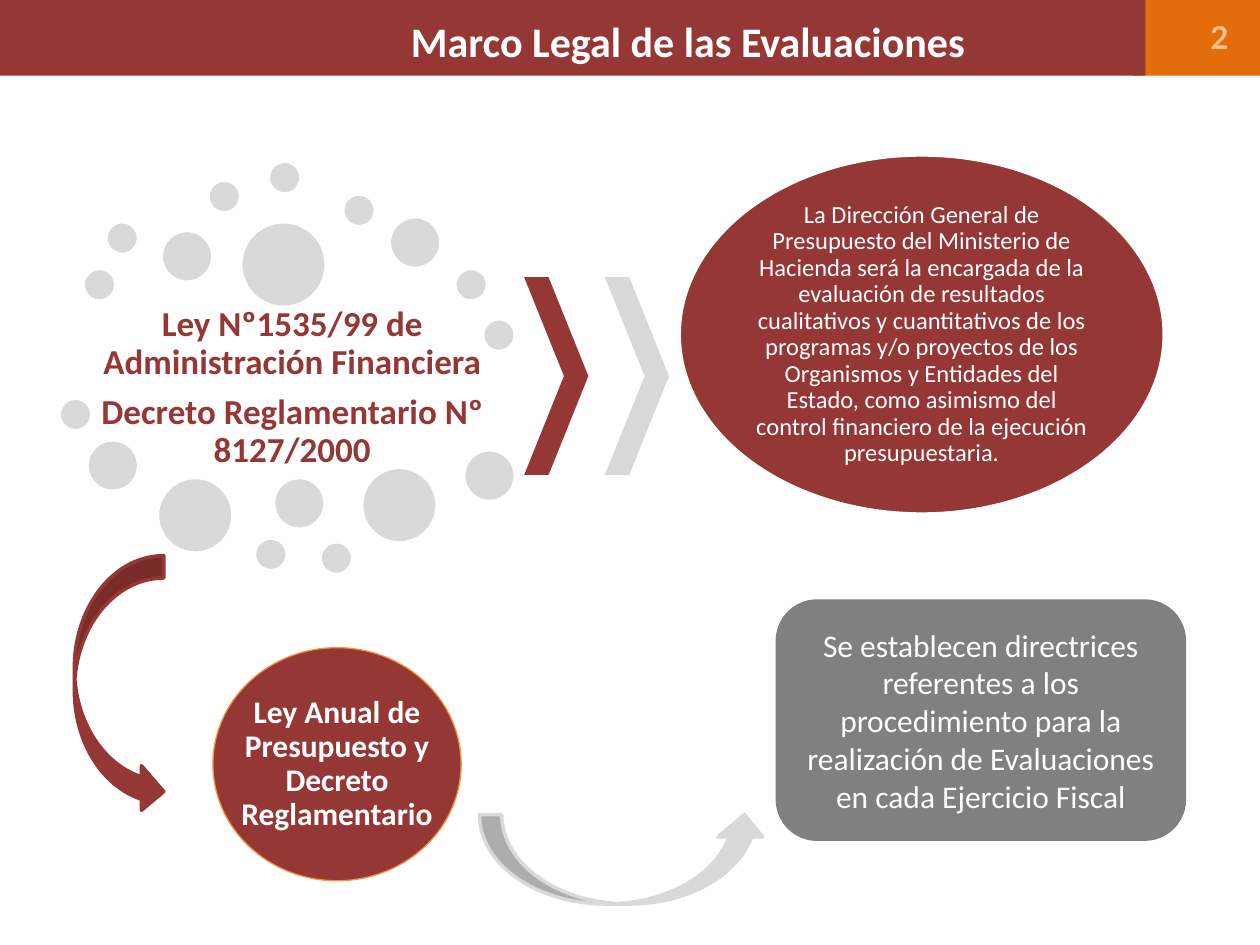
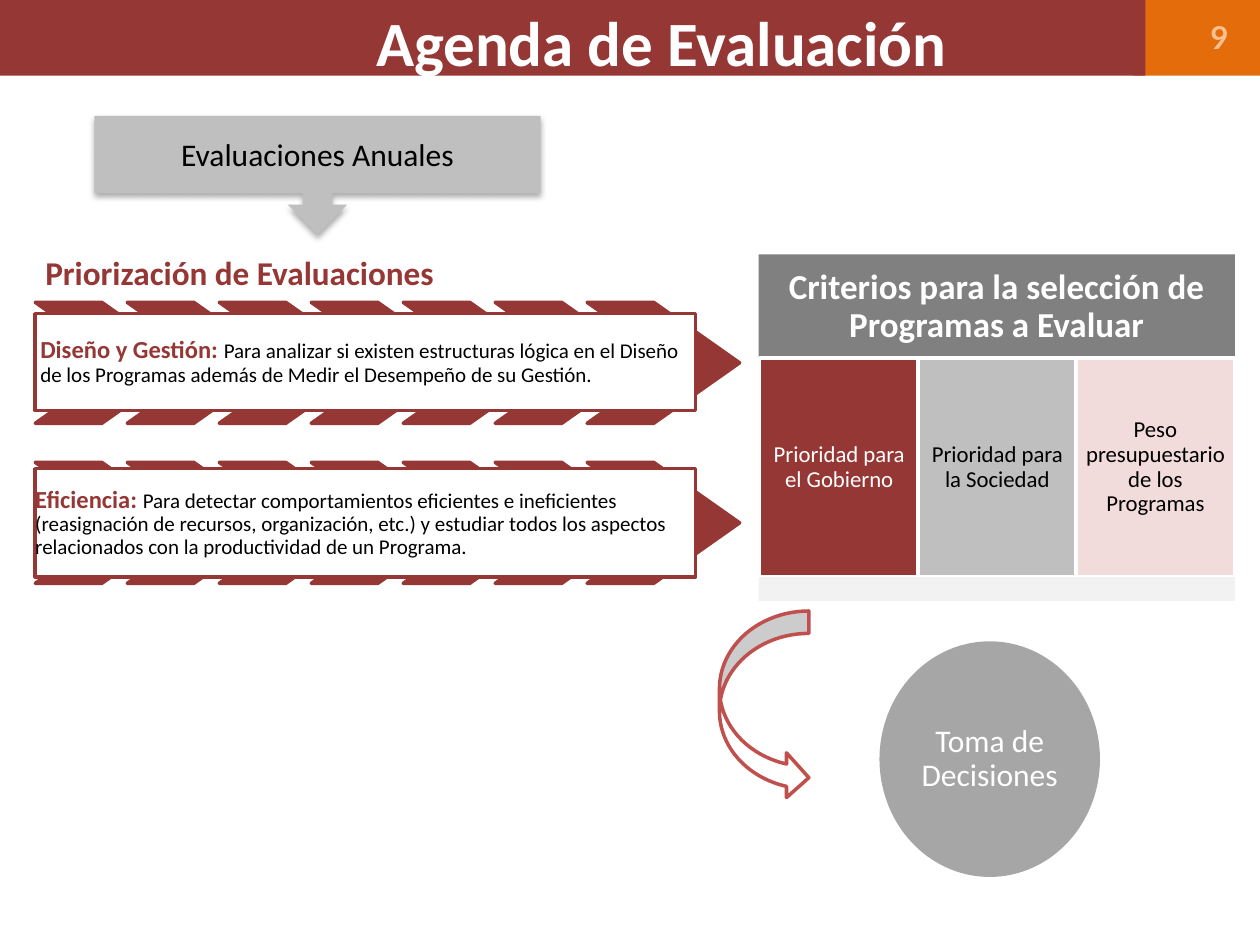
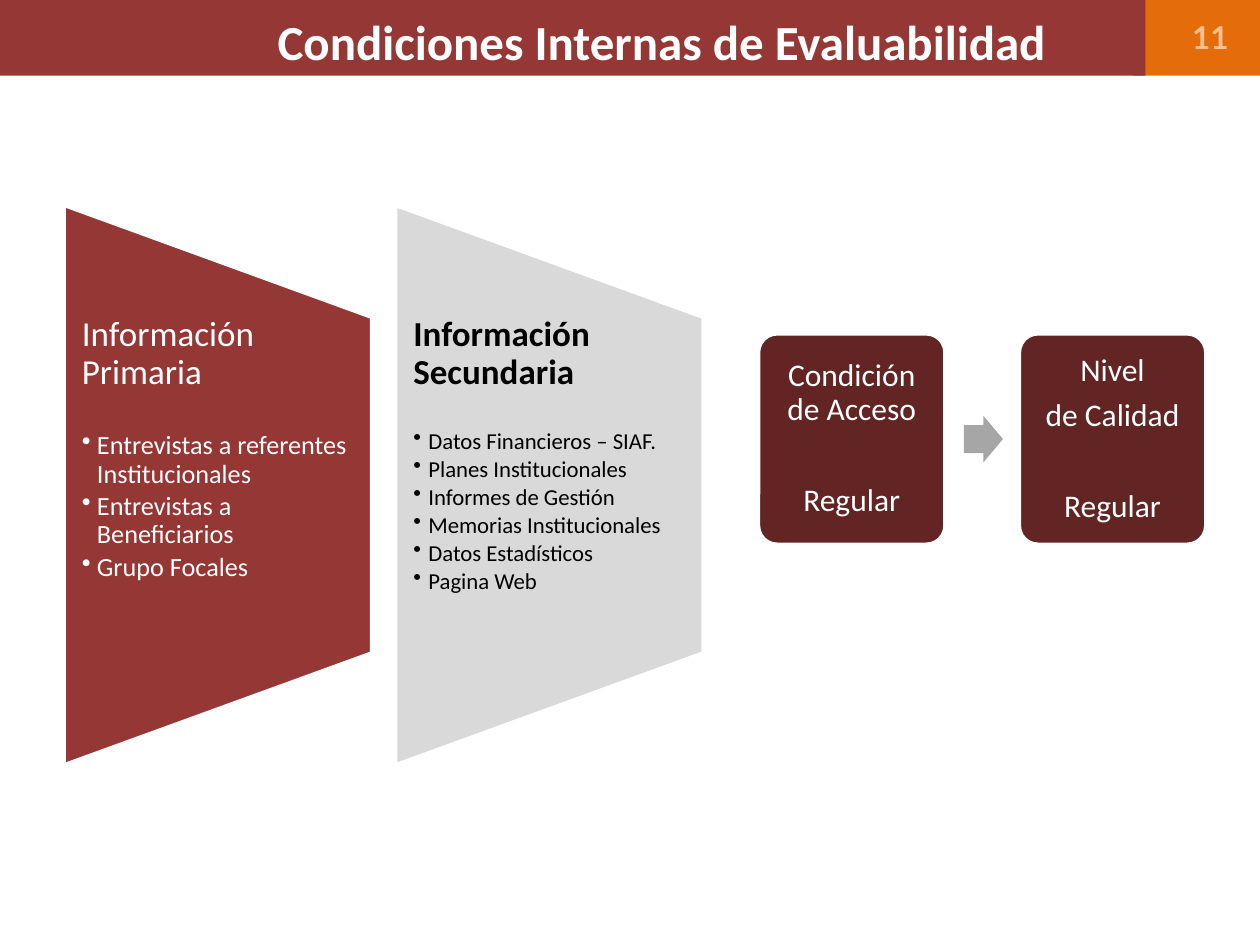
import pptx
import pptx.dml.color
import pptx.enum.shapes
import pptx.enum.text
import pptx.oxml
import pptx.util
from lxml import etree

Inches = pptx.util.Inches
Pt = pptx.util.Pt
RGBColor = pptx.dml.color.RGBColor
SHAPE = pptx.enum.shapes.MSO_SHAPE
ANCHOR = pptx.enum.text.MSO_ANCHOR
ALIGN = pptx.enum.text.PP_ALIGN

WINE = RGBColor(0x95, 0x37, 0x35)
DARK_WINE = RGBColor(0x63, 0x25, 0x23)
RED = RGBColor(0xC0, 0x50, 0x4D)
ROSE = RGBColor(0xF2, 0xDC, 0xDB)
ORANGE = RGBColor(0xE4, 0x6C, 0x0A)
LIGHT_ORANGE = RGBColor(0xF5, 0x92, 0x40)
PEACH = RGBColor(0xFA, 0xC0, 0x90)
WHITE = RGBColor(0xFF, 0xFF, 0xFF)
BLACK = RGBColor(0, 0, 0)
PALE_GRAY = RGBColor(0xF2, 0xF2, 0xF2)
LIGHT_GRAY = RGBColor(0xD9, 0xD9, 0xD9)
SILVER = RGBColor(0xBF, 0xBF, 0xBF)
MID_GRAY = RGBColor(0xA6, 0xA6, 0xA6)
GRAY = RGBColor(0x80, 0x80, 0x80)
DRAWING_NS = "http://schemas.openxmlformats.org/drawingml/2006/main"


def draw(slide, kind, box, fill, line=None, width=2, adjust=None):
    shape = slide.shapes.add_shape(kind, *[Inches(length) for length in box])
    shape.shadow.inherit = False
    shape.fill.solid()
    shape.fill.fore_color.rgb = fill
    if line is None:
        shape.line.fill.background()
    else:
        shape.line.color.rgb = line
        shape.line.width = Pt(width)
    if adjust is not None:
        shape.adjustments[0] = adjust
    return shape


def write(shape, text, size, color, bold=False, align=ALIGN.CENTER, inset=None,
          anchor=ANCHOR.MIDDLE, spacing=0.9, after=0.35, font="Calibri"):
    frame = shape.text_frame
    frame.text = text
    frame.word_wrap = True
    frame.auto_size = pptx.enum.text.MSO_AUTO_SIZE.NONE
    frame.vertical_anchor = anchor
    if inset is not None:
        frame.margin_left = frame.margin_right = Inches(inset)
        frame.margin_top = frame.margin_bottom = Inches(inset)
    for paragraph in frame.paragraphs:
        paragraph.alignment = align
        paragraph.line_spacing = spacing
        paragraph.space_after = Pt(size * after)
        for run in paragraph.runs:
            run.font.name = font
            run.font.size = Pt(size)
            run.font.bold = bold
            run.font.color.rgb = color
    return frame


prs = pptx.Presentation()
prs.slide_width = Inches(10)
prs.slide_height = Inches(7.5)
layout = prs.slide_layouts[5]

slides = []
for title, size, left, number in [
    ("Marco Legal de las Evaluaciones", 24, 0.96, "2"),
    ("Agenda de Evaluación", 36, 0.75, "9"),
    ("Condiciones Internas de Evaluabilidad", 28, 0.75, "11"),
]:
    slide = prs.slides.add_slide(layout)
    heading = slide.shapes.title
    heading.left, heading.top = Inches(left), Inches(0.01)
    heading.width, heading.height = Inches(9), Inches(0.63)
    write(heading, title, size, WHITE, bold=True, spacing=1.0, after=0)
    page = slide.shapes.add_textbox(Inches(9.1), Inches(0.09), Inches(0.75), Inches(0.4))
    write(page, number, 18, PEACH, bold=True, align=ALIGN.RIGHT, spacing=1.0, after=0, font="Lato")
    slides.append(slide)
legal, agenda, conditions = slides

for order, (box, color) in enumerate([((8.99, 0, 1.01, 0.6), ORANGE), ((0, 0, 9.09, 0.6), WINE)]):
    band = draw(legal, SHAPE.RECTANGLE, box, color)
    band._element.nvSpPr.cNvPr.set("id", str(20 + order))
    layout.shapes._spTree.insert(2 + order, band._element)

laws = legal.shapes.add_textbox(Inches(0.66), Inches(2.35), Inches(3.32), Inches(1.46))
write(laws, "Ley Nº1535/99 de Administración Financiera\nDecreto Reglamentario Nº 8127/2000",
      20, WINE, bold=True, inset=0.03)
dots = {
    0.26: [(0.66, 2.13), (0.84, 1.76), (1.65, 1.43), (2.13, 1.28), (2.72, 1.54), (3.61, 2.13),
           (3.83, 2.53), (0.47, 3.16), (2.02, 4.27), (2.54, 4.3)],
    0.41: [(1.28, 1.83), (3.09, 1.72), (0.69, 3.49), (2.17, 3.79), (3.68, 3.57)],
    0.6: [(1.25, 3.79), (2.87, 3.71)],
    0.68: [(1.91, 1.76)],
}
for diameter, places in dots.items():
    for left, top in places:
        draw(legal, SHAPE.OVAL, (left, top, diameter, diameter), LIGHT_GRAY, WHITE)
for left, color in [(4.16, WINE), (4.8, LIGHT_GRAY)]:
    draw(legal, SHAPE.CHEVRON, (left, 2.2, 0.51, 1.57), color, adjust=0.62)
mandate = draw(legal, SHAPE.OVAL, (5.39, 1.23, 3.85, 2.85), WINE, WHITE)
write(mandate, "La Dirección General de Presupuesto del Ministerio de Hacienda será la encargada de la "
      "evaluación de resultados cualitativos y cuantitativos de los programas y/o proyectos de los "
      "Organismos y Entidades del Estado, como asimismo del control financiero de la ejecución "
      "presupuestaria.", 14, WHITE, inset=0)
draw(legal, SHAPE.CURVED_RIGHT_ARROW, (0.59, 4.41, 0.71, 2.05), WINE, WINE)
guidelines = draw(legal, SHAPE.ROUNDED_RECTANGLE, (6.17, 4.77, 3.23, 1.89), GRAY, GRAY)
write(guidelines, "Se establecen directrices referentes a los procedimiento para la realización de "
      "Evaluaciones en cada Ejercicio Fiscal", 18, WHITE, spacing=1.0, after=0)
yearly_box = (1.69, 5.14, 1.97, 1.85)
draw(legal, SHAPE.OVAL, yearly_box, WINE, LIGHT_ORANGE, 0.75)
yearly_law = legal.shapes.add_textbox(*[Inches(length) for length in yearly_box])
write(yearly_law, "Ley Anual de Presupuesto y Decreto Reglamentario", 18, WHITE, bold=True, inset=0.18)
draw(legal, SHAPE.CURVED_RIGHT_ARROW, (4.59, 5.68, 0.71, 2.28), LIGHT_GRAY, LIGHT_GRAY).rotation = 270

priorities = agenda.shapes.add_textbox(Inches(0.28), Inches(1.93), Inches(5.17), Inches(0.47))
write(priorities, "Priorización de Evaluaciones", 19, WINE, bold=True, align=ALIGN.LEFT,
      inset=0.08, anchor=ANCHOR.BOTTOM)
for chevron_top, top, height, inset, name, purpose in [
    (2.4, 2.49, 0.77, 0.04, "Diseño y Gestión: ",
     "Para analizar si existen estructuras lógica en el Diseño de los Programas además de Medir el "
     "Desempeño de su Gestión."),
    (3.67, 3.72, 0.86, 0, "Eficiencia: ",
     "Para detectar comportamientos eficientes e ineficientes (reasignación de recursos, "
     "organización, etc.) y estudiar todos los aspectos relacionados con la productividad de un "
     "Programa."),
]:
    for step in range(7):
        draw(agenda, SHAPE.CHEVRON, (0.28 + 0.73 * step, chevron_top, 1.21, 0.96), WINE, WINE, adjust=0.71)
    priority = draw(agenda, SHAPE.RECTANGLE, (0.28, top, 5.24, height), WHITE, WINE)
    frame = write(priority, name, 14, WINE, bold=True, align=ALIGN.LEFT, inset=inset)
    detail = frame.paragraphs[0].add_run()
    detail.text = purpose
    detail.font.name = "Calibri"
    detail.font.size = Pt(12)
    detail.font.color.rgb = BLACK

criteria = draw(agenda, SHAPE.RECTANGLE, (6.02, 2.02, 3.78, 0.83), GRAY)
write(criteria, "Criterios para la selección de Programas a Evaluar", 20, WHITE, bold=True, inset=0.08)
for column, (label, fill, color) in enumerate([
    ("Prioridad para el Gobierno", WINE, WHITE),
    ("Prioridad para la Sociedad", SILVER, BLACK),
    ("Peso presupuestario de los Programas", ROSE, BLACK),
]):
    criterion = draw(agenda, SHAPE.RECTANGLE, (6.03 + 1.255 * column, 2.84, 1.26, 1.74), fill, WHITE)
    write(criterion, label, 13, color, inset=0.05)
draw(agenda, SHAPE.RECTANGLE, (6.02, 4.58, 3.78, 0.19), PALE_GRAY)

annual = draw(agenda, SHAPE.DOWN_ARROW_CALLOUT, (0.75, 0.92, 3.54, 0.94), SILVER)
write(annual, "Evaluaciones Anuales", 18, BLACK, spacing=1.0, after=0)
effects = annual._element.spPr.find(f"{{{DRAWING_NS}}}effectLst")
effects.append(pptx.oxml.parse_xml(
    f'<a:outerShdw xmlns:a="{DRAWING_NS}" blurRad="44450" dist="27940" dir="5400000" rotWithShape="0">'
    '<a:srgbClr val="000000"><a:alpha val="32000"/></a:srgbClr></a:outerShdw>'))

decisions = draw(agenda, SHAPE.OVAL, (6.98, 5.09, 1.75, 1.87), MID_GRAY)
write(decisions, "Toma de Decisiones", 18, WHITE, inset=0.04)
draw(agenda, SHAPE.CURVED_RIGHT_ARROW, (5.71, 4.85, 0.71, 1.5), WHITE, RED)

for left, fill, color, bold, size, gap, source, items in [
    (0.51, WINE, WHITE, False, 15, 23, "Información Primaria",
     ["Entrevistas a referentes Institucionales", "Entrevistas a Beneficiarios", "Grupo Focales"]),
    (3.14, LIGHT_GRAY, BLACK, True, 13, 21.5, "Información Secundaria",
     ["Datos Financieros – SIAF.", "Planes Institucionales", "Informes de Gestión",
      "Memorias Institucionales", "Datos Estadísticos", "Pagina Web"]),
]:
    panel = draw(conditions, SHAPE.FLOWCHART_MANUAL_OPERATION, (left - 1, 2.63, 4.44, 2.44), fill, WHITE)
    panel.rotation = 270
    listing = conditions.shapes.add_textbox(Inches(left), Inches(2.51), Inches(2.44), Inches(2.67))
    frame = write(listing, "\n".join([source] + items), size, color, align=ALIGN.LEFT,
                  inset=0.14, anchor=ANCHOR.TOP, after=0.15)
    frame.margin_top = frame.margin_bottom = 0
    source_line, *item_lines = frame.paragraphs
    source_line.space_after = Pt(gap)
    source_line.runs[0].font.size = Pt(20)
    source_line.runs[0].font.bold = bold
    for item in item_lines:
        properties = item._p.get_or_add_pPr()
        properties.set("marL", str(Inches(0.12)))
        properties.set("indent", str(-Inches(0.12)))
        etree.SubElement(properties, f"{{{DRAWING_NS}}}buChar").set("char", "•")

for left, text in [(6.02, "Condición de Acceso\nRegular"), (8.09, "Nivel\nde Calidad\nRegular")]:
    rating = draw(conditions, SHAPE.ROUNDED_RECTANGLE, (left, 2.65, 1.48, 1.67), DARK_WINE, WHITE, adjust=0.1)
    frame = write(rating, text, 18, WHITE, inset=0.07)
    frame.paragraphs[-2].space_after = Pt(32.4)
draw(conditions, SHAPE.RIGHT_ARROW, (7.65, 3.3, 0.31, 0.37), MID_GRAY, adjust=0.6)

prs.save("out.pptx")
